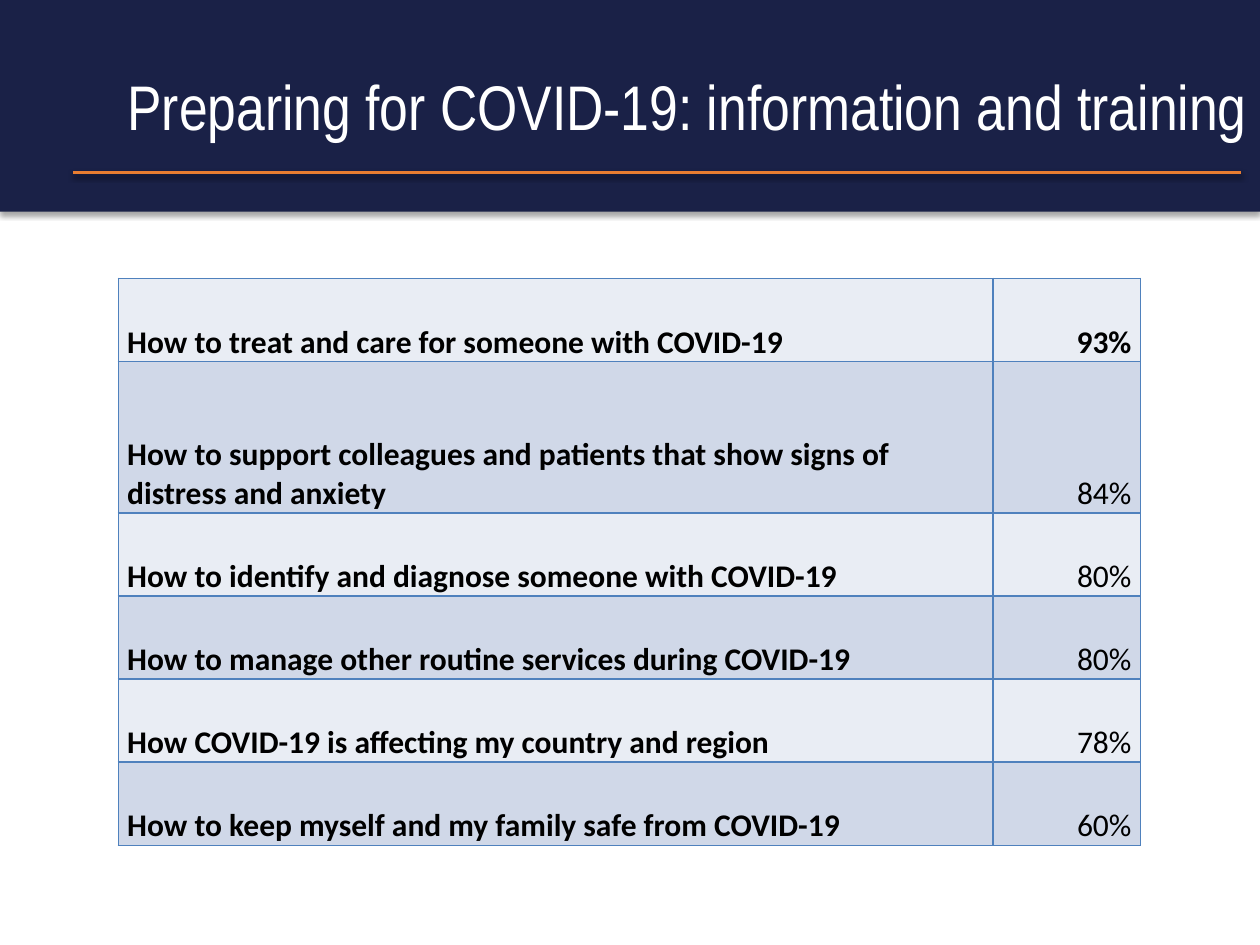
import pptx
import pptx.util
import pptx.dml.color
import pptx.enum.shapes
import pptx.enum.text
import pptx.oxml.ns
from lxml import etree

Inches = pptx.util.Inches
Pt = pptx.util.Pt
ANCHOR = pptx.enum.text.MSO_ANCHOR
ALIGN = pptx.enum.text.PP_ALIGN
qn = pptx.oxml.ns.qn

COLOURS = {
    "navy": "1A2147",
    "orange": "E87D31",
    "white": "FFFFFF",
    "black": "000000",
    "border": "4F81BD",
    "light": "E9EDF4",
    "dark": "D0D8E8",
}
TOPICS = [
    ("How to treat and care for someone with COVID-19", "93%"),
    ("How to support colleagues and patients that show signs of distress and anxiety", "84%"),
    ("How to identify and diagnose someone with COVID-19", "80%"),
    ("How to manage other routine services during COVID-19", "80%"),
    ("How COVID-19 is affecting my country and region", "78%"),
    ("How to keep myself and my family safe from COVID-19", "60%"),
]
COLUMN_WIDTHS = (6.94, 1.17)
ROW_HEIGHTS = (0.66, 1.2, 0.66, 0.66, 0.66, 0.66)


def rgb(name):
    return pptx.dml.color.RGBColor.from_string(COLOURS[name])


def style_font(paragraph, face, size, colour, bold=False):
    font = paragraph.font
    font.name, font.size, font.bold = face, Pt(size), bold
    font.color.rgb = rgb(colour)


def add_shadow(shape, opacity, distance):
    """Cast a soft black shadow straight down; call after the line is set."""
    effects = etree.SubElement(shape.element.spPr, qn("a:effectLst"))
    shadow = etree.SubElement(
        effects, qn("a:outerShdw"), blurRad=str(Pt(3.1)), dist=str(Pt(distance)),
        dir="5400000", algn="t", rotWithShape="0")
    black = etree.SubElement(shadow, qn("a:srgbClr"), val=COLOURS["black"])
    etree.SubElement(black, qn("a:alpha"), val=str(opacity * 1000))


def add_banner(slide):
    banner = slide.shapes.add_shape(
        pptx.enum.shapes.MSO_SHAPE.RECTANGLE, 0, 0, Inches(10), Inches(1.68))
    banner.fill.solid()
    banner.fill.fore_color.rgb = rgb("navy")
    banner.line.fill.background()
    add_shadow(banner, 35, 1.8)
    # Place the banner behind the title placeholder
    slide.shapes.title.element.addprevious(banner.element)


def set_title(slide, text):
    title = slide.shapes.title
    title.left, title.top = Inches(0), Inches(0.21)
    title.width, title.height = Inches(10), Inches(1.25)
    frame = title.text_frame
    frame.text = text
    frame.word_wrap = True
    frame.vertical_anchor = ANCHOR.MIDDLE
    paragraph = frame.paragraphs[0]
    paragraph.alignment = ALIGN.RIGHT
    style_font(paragraph, "Arial Narrow", 36, "white")


def set_borders(cell):
    properties = cell._tc.get_or_add_tcPr()
    for side in ("a:lnL", "a:lnR", "a:lnT", "a:lnB"):
        line = etree.SubElement(properties, qn(side), w=str(Pt(1)))
        fill = etree.SubElement(line, qn("a:solidFill"))
        etree.SubElement(fill, qn("a:srgbClr"), val=COLOURS["border"])


def fill_cell(cell, text, band, alignment, bold):
    set_borders(cell)
    cell.fill.solid()
    cell.fill.fore_color.rgb = rgb(band)
    cell.margin_left = cell.margin_right = Inches(0.07)
    cell.margin_top = cell.margin_bottom = 0
    cell.vertical_anchor = ANCHOR.BOTTOM
    cell.text = text
    paragraph = cell.text_frame.paragraphs[0]
    paragraph.alignment = alignment
    style_font(paragraph, "Calibri", 18, "black", bold)


def add_topic_table(slide):
    table = slide.shapes.add_table(
        len(TOPICS), len(COLUMN_WIDTHS), Inches(0.94), Inches(2.21),
        Inches(sum(COLUMN_WIDTHS)), Inches(sum(ROW_HEIGHTS))).table
    table.first_row = False
    for column, width in zip(table.columns, COLUMN_WIDTHS):
        column.width = Inches(width)
    for index, (topic, share) in enumerate(TOPICS):
        table.rows[index].height = Inches(ROW_HEIGHTS[index])
        band = "dark" if index % 2 else "light"
        fill_cell(table.cell(index, 0), topic, band, ALIGN.LEFT, True)
        fill_cell(table.cell(index, 1), share, band, ALIGN.RIGHT, index == 0)


def add_title_rule(slide):
    rule = slide.shapes.add_connector(
        pptx.enum.shapes.MSO_CONNECTOR.STRAIGHT,
        Inches(9.85), Inches(1.37), Inches(0.58), Inches(1.37))
    rule.line.color.rgb = rgb("orange")
    rule.line.width = Pt(2)
    add_shadow(rule, 38, 1.6)


def main():
    deck = pptx.Presentation()
    deck.slide_width, deck.slide_height = Inches(10), Inches(7.5)
    slide = deck.slides.add_slide(deck.slide_layouts.get_by_name("Title Only"))
    add_banner(slide)
    set_title(slide, "Preparing for COVID-19: information and training")
    add_topic_table(slide)
    add_title_rule(slide)
    deck.save("out.pptx")


if __name__ == "__main__":
    main()
